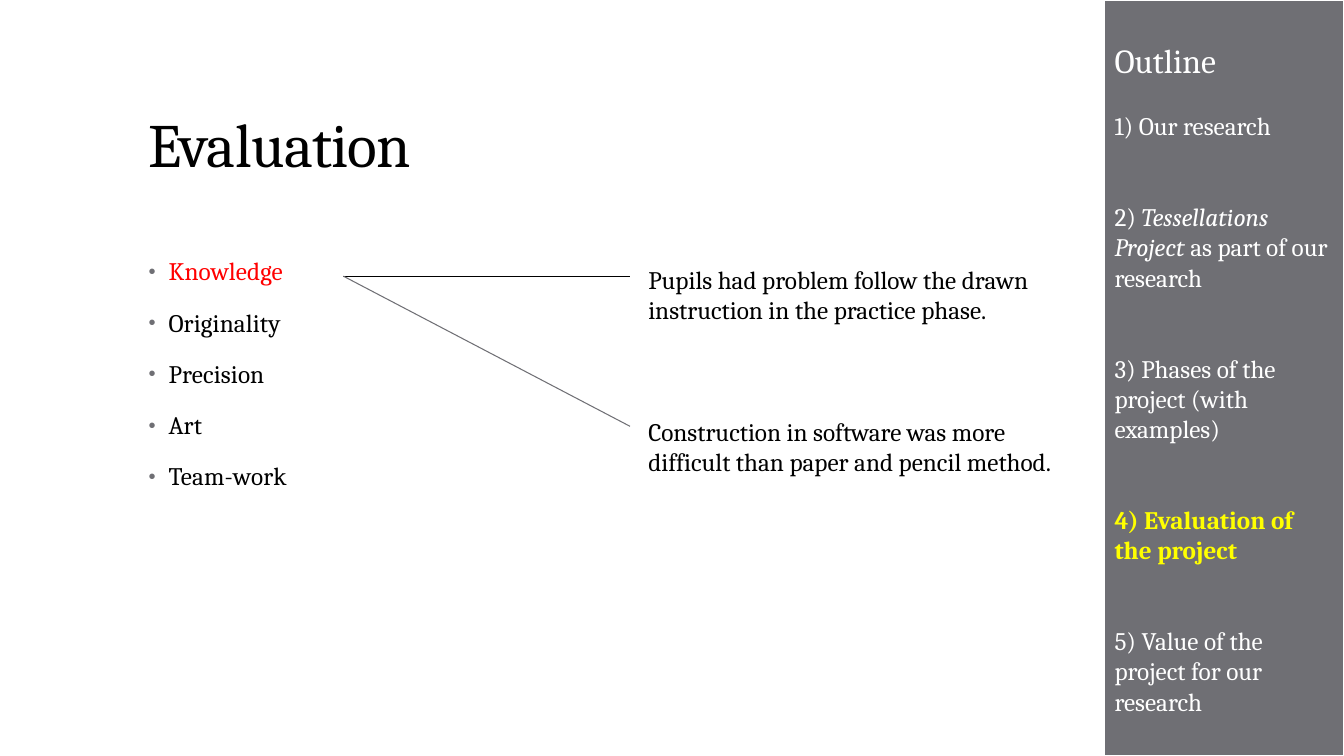
from lxml.etree import SubElement
from pptx import Presentation
from pptx.dml.color import RGBColor
from pptx.enum.shapes import MSO_CONNECTOR, MSO_SHAPE
from pptx.enum.text import MSO_ANCHOR as ANCHOR, PP_ALIGN as ALIGN
from pptx.oxml.ns import qn
from pptx.util import Emu, Pt

PX = 9525
COLORS = {"black": "000000", "white": "FFFFFF", "gray": "6F6F74",
          "red": "FF0000", "yellow": "FFFF00"}
FONT = "Cambria"

CRITERIA = ["Knowledge", "Originality", "Precision", "Art", "Team-work"]
FINDINGS = [
    "Pupils had problem follow the drawn instruction in the practice phase.",
    "Construction in software was more difficult than paper and pencil method.",
]
OUTLINE = [
    [("1) Our research", {})],
    [("2) ", {}), ("Tessellations Project ", {"italic": True}),
     ("as part of our research", {})],
    [("3) Phases of the project (with examples)", {})],
    [("4) Evaluation of the project", {"color": "yellow", "bold": True})],
    [("5) Value of the project for our research", {})],
]


def px(*lengths):
    return [Emu(n * PX) for n in lengths]


def rgb(name):
    return RGBColor.from_string(COLORS[name])


def add_text(p, text, size=18, color="black", bold=False, italic=False, spacing=0):
    """Append a run; spacing is the letter spacing in hundredths of a point."""
    r = p.add_run()
    r.text = text
    f = r.font
    f.name, f.size, f.bold, f.italic = FONT, Pt(size), bold, italic
    f.color.rgb = rgb(color)
    if spacing:
        r._r.get_or_add_rPr().set("spc", str(spacing))


def add_paragraph(tf, before=0, after=0, line=1.0):
    """Use the frame's first paragraph while it is empty, else add one."""
    p = tf.paragraphs[-1]
    if p.runs:
        p = tf.add_paragraph()
    p.alignment = ALIGN.LEFT
    p.space_before, p.space_after, p.line_spacing = Pt(before), Pt(after), line
    return p


def add_bullet(p, indent):
    pPr = p._p.get_or_add_pPr()
    pPr.set("marL", str(indent * PX))
    pPr.set("indent", str(-indent * PX))
    color = SubElement(pPr, qn("a:buClr"))
    SubElement(color, qn("a:srgbClr"), val=COLORS["gray"])
    SubElement(pPr, qn("a:buSzPct"), val="80000")
    SubElement(pPr, qn("a:buFont"), typeface="Arial")
    SubElement(pPr, qn("a:buChar"), char="•")


def add_box(slide, x, y, w, h, anchor=ANCHOR.TOP):
    tf = slide.shapes.add_textbox(*px(x, y, w, h)).text_frame
    tf.word_wrap = True
    tf.vertical_anchor = anchor
    return tf


def add_panel(slide, x, y, w, h, fill, line=None, anchor=ANCHOR.TOP):
    sp = slide.shapes.add_shape(MSO_SHAPE.RECTANGLE, *px(x, y, w, h))
    sp.shadow.inherit = False
    sp.fill.solid()
    sp.fill.fore_color.rgb = rgb(fill)
    if line:
        sp.line.color.rgb = rgb(line)
        sp.line.width = Pt(1.1)
    else:
        sp.line.fill.background()
    tf = sp.text_frame
    tf.word_wrap = True
    tf.vertical_anchor = anchor
    return tf


def add_line(slide, x1, y1, x2, y2, color):
    line = slide.shapes.add_connector(MSO_CONNECTOR.STRAIGHT, *px(x1, y1, x2, y2))
    line.line.color.rgb = rgb(color)
    line.line.width = Pt(0.75)
    SubElement(line._element.spPr, qn("a:effectLst"))


def add_criteria(slide):
    tf = add_box(slide, 132, 241, 902, 408)
    for name in CRITERIA:
        p = add_paragraph(tf, before=14 if name != CRITERIA[0] else 0, after=2, line=0.95)
        add_bullet(p, indent=19)
        add_text(p, name, color="red" if name == "Knowledge" else "black", spacing=10)


def add_findings(slide):
    first, second = FINDINGS
    add_text(add_paragraph(add_box(slide, 608, 247, 419, 97)), first)
    add_text(add_paragraph(add_panel(slide, 608, 392, 419, 97, "white")), second)
    for end_y, color in ((263, "black"), (406, "gray")):
        add_line(slide, 327, 263, 600, end_y, color)


def add_outline(slide):
    tf = add_panel(slide, 1052, 0, 228, 720, "gray", "white", ANCHOR.MIDDLE)
    add_text(add_paragraph(tf, after=21.7), "Outline", size=24, color="white")
    for i, runs in enumerate(OUTLINE):
        p = add_paragraph(tf, before=43.4 if i else 0)
        for text, style in runs:
            add_text(p, text, **{"color": "white", **style})


def main():
    prs = Presentation()
    prs.slide_width, prs.slide_height = px(1280, 720)
    slide = prs.slides.add_slide(prs.slide_layouts[6])
    title = add_box(slide, 132, 38, 1018, 139, ANCHOR.BOTTOM)
    add_text(add_paragraph(title, line=0.9), "Evaluation", size=44, spacing=-50)
    add_criteria(slide)
    add_findings(slide)
    add_outline(slide)
    prs.save("out.pptx")


if __name__ == "__main__":
    main()
